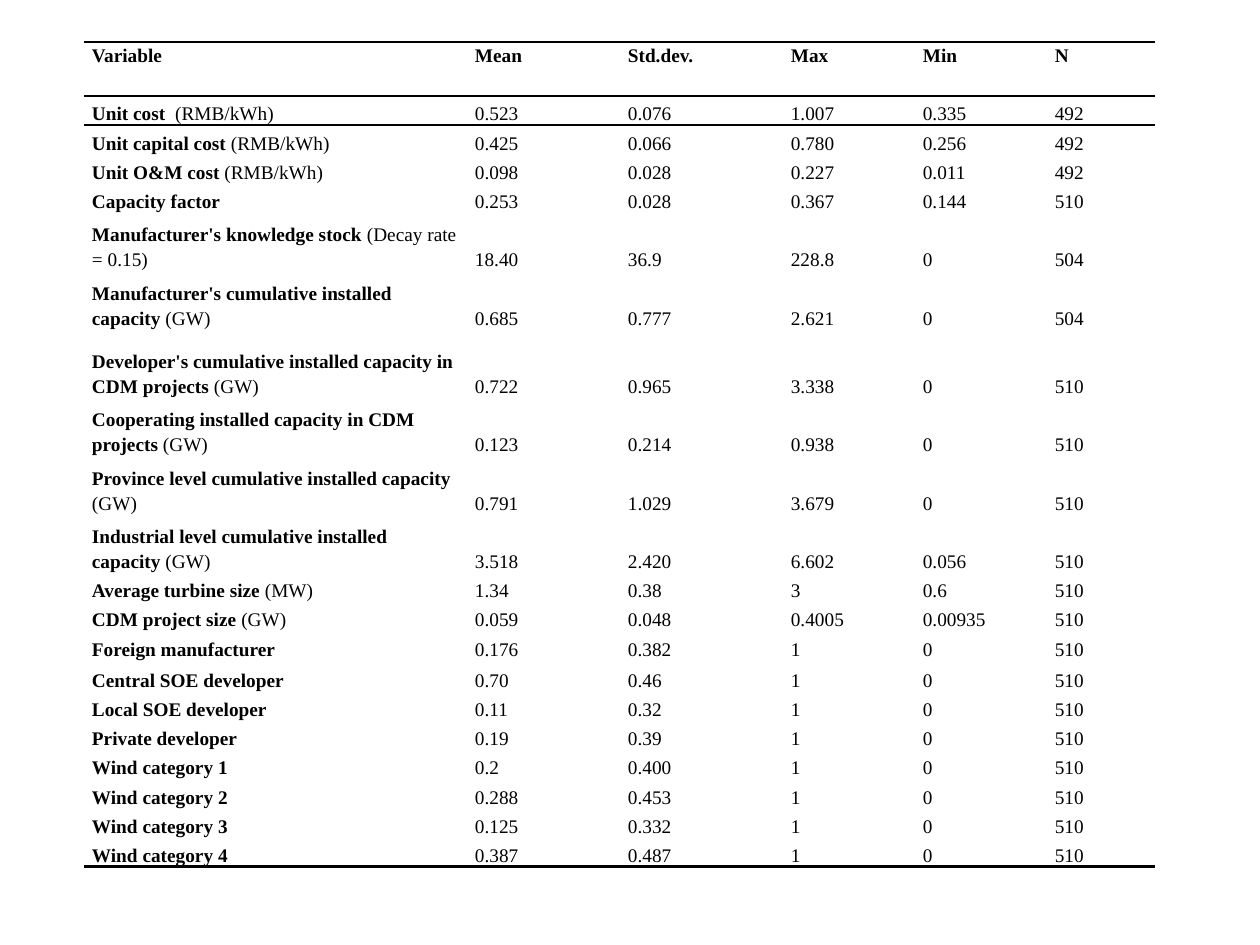
from dataclasses import dataclass

from lxml.etree import SubElement
from pptx import Presentation
from pptx.dml.color import RGBColor
from pptx.enum.text import MSO_ANCHOR
from pptx.oxml.ns import qn
from pptx.table import Table, _Cell
from pptx.util import Emu, Pt

PX = 914400 // 126
FONT = "Times New Roman"
INK = "000000"
TEXT_SIZE = 11
LINE_SPACING = 1.15
RULE_WIDTH = 1.5
NO_GRID_STYLE = "{2D5ABB26-0587-4C30-8999-92F81FD0307C}"
COLUMN_WIDTHS = [383, 153, 163, 132, 132, 108]
CELL_FORMAT = {
    "vertical_anchor": MSO_ANCHOR.BOTTOM,
    "margin_left": Emu(8 * PX),
    "margin_right": Emu(8 * PX),
    "margin_top": 0,
    "margin_bottom": 0,
}


@dataclass(frozen=True)
class Statistic:
    """One table row: bold name, plain unit, space-separated values and height in px."""

    name: str
    unit: str
    values: str
    height: int = 29
    bold_values: bool = False
    rules: tuple[str, ...] = ()


STATISTICS = [
    Statistic("Variable", "", "Mean Std.dev. Max Min N", 25, True, ("lnT",)),
    Statistic("", "", "", rules=("lnB",)),
    Statistic("Unit cost", "  (RMB/kWh)", "0.523 0.076 1.007 0.335 492", rules=("lnT",)),
    Statistic("Unit capital cost", " (RMB/kWh)", "0.425 0.066 0.780 0.256 492", 30),
    Statistic("Unit O&M cost", " (RMB/kWh)", "0.098 0.028 0.227 0.011 492"),
    Statistic("Capacity factor", "", "0.253 0.028 0.367 0.144 510"),
    Statistic("Manufacturer's knowledge stock ", "(Decay rate = 0.15)", "18.40 36.9 228.8 0 504", 58),
    Statistic("Manufacturer's cumulative installed capacity ", "(GW)", "0.685 0.777 2.621 0 504", 59),
    Statistic("Developer's cumulative installed capacity in CDM projects ", "(GW)", "0.722 0.965 3.338 0 510", 68),
    Statistic("Cooperating installed capacity in CDM projects ", "(GW)", "0.123 0.214 0.938 0 510", 58),
    Statistic("Province level cumulative installed capacity ", "(GW)", "0.791 1.029 3.679 0 510", 59),
    Statistic("Industrial level cumulative installed capacity ", "(GW)", "3.518 2.420 6.602 0.056 510", 58),
    Statistic("Average turbine size ", "(MW)", "1.34 0.38 3 0.6 510"),
    Statistic("CDM project size ", "(GW)", "0.059 0.048 0.4005 0.00935 510"),
    Statistic("Foreign manufacturer", "", "0.176 0.382 1 0 510", 30),
    Statistic("Central SOE developer", "", "0.70 0.46 1 0 510", 31),
    Statistic("Local SOE developer", "", "0.11 0.32 1 0 510"),
    Statistic("Private developer", "", "0.19 0.39 1 0 510"),
    Statistic("Wind category 1", "", "0.2 0.400 1 0 510"),
    Statistic("Wind category 2", "", "0.288 0.453 1 0 510", 30),
    Statistic("Wind category 3", "", "0.125 0.332 1 0 510"),
    Statistic("Wind category 4", "", "0.387 0.487 1 0 510", rules=("lnB",)),
]


def px(length: int) -> Emu:
    """Turn whole pixels into EMU."""
    return Emu(length * PX)


def colour(value: str) -> RGBColor:
    """Turn a hex string into a colour."""
    return RGBColor.from_string(value)


def draw_rule(cell: _Cell, side: str) -> None:
    """Draw a black rule on one side of a cell."""
    rule = SubElement(cell._tc.get_or_add_tcPr(), qn(f"a:{side}"), w=str(Pt(RULE_WIDTH)))
    SubElement(SubElement(rule, qn("a:solidFill")), qn("a:srgbClr"), val=INK)


def write_cell(cell: _Cell, pieces: list[tuple[str, bool]], rules: tuple[str, ...]) -> None:
    """Format a cell and write its pieces of text, each bold or plain."""
    for side in rules:
        draw_rule(cell, side)
    cell.fill.background()
    for attribute, value in CELL_FORMAT.items():
        setattr(cell, attribute, value)
    paragraph = cell.text_frame.paragraphs[0]
    paragraph.line_spacing = LINE_SPACING
    for text, bold in pieces:
        if text:
            run = paragraph.add_run()
            run.text = text
            run.font.color.rgb = colour(INK)
            for attribute, value in {"name": FONT, "size": Pt(TEXT_SIZE), "bold": bold}.items():
                setattr(run.font, attribute, value)
    SubElement(paragraph._p, qn("a:endParaRPr"), sz=str(TEXT_SIZE * 100))


def fill_row(table: Table, index: int, statistic: Statistic) -> None:
    """Write one statistic into a table row."""
    table.rows[index].height = px(statistic.height)
    values = statistic.values.split() or [""] * (len(COLUMN_WIDTHS) - 1)
    label = [(statistic.name, True), (statistic.unit, False)]
    contents = [label] + [[(value, statistic.bold_values)] for value in values]
    for column, pieces in enumerate(contents):
        write_cell(table.cell(index, column), pieces, statistic.rules)


def main() -> None:
    """Build the slide with the table of descriptive statistics."""
    presentation = Presentation()
    presentation.slide_width, presentation.slide_height = px(1260), px(945)
    slide = presentation.slides.add_slide(presentation.slide_layouts[6])
    table = slide.shapes.add_table(
        len(STATISTICS), len(COLUMN_WIDTHS), px(84), px(42),
        px(sum(COLUMN_WIDTHS)), px(sum(row.height for row in STATISTICS)),
    ).table
    table.first_row = table.horz_banding = False
    table._tbl.tblPr.find(qn("a:tableStyleId")).text = NO_GRID_STYLE
    for column, width in zip(table.columns, COLUMN_WIDTHS):
        column.width = px(width)
    for index, statistic in enumerate(STATISTICS):
        fill_row(table, index, statistic)
    presentation.save("out.pptx")


if __name__ == "__main__":
    main()
